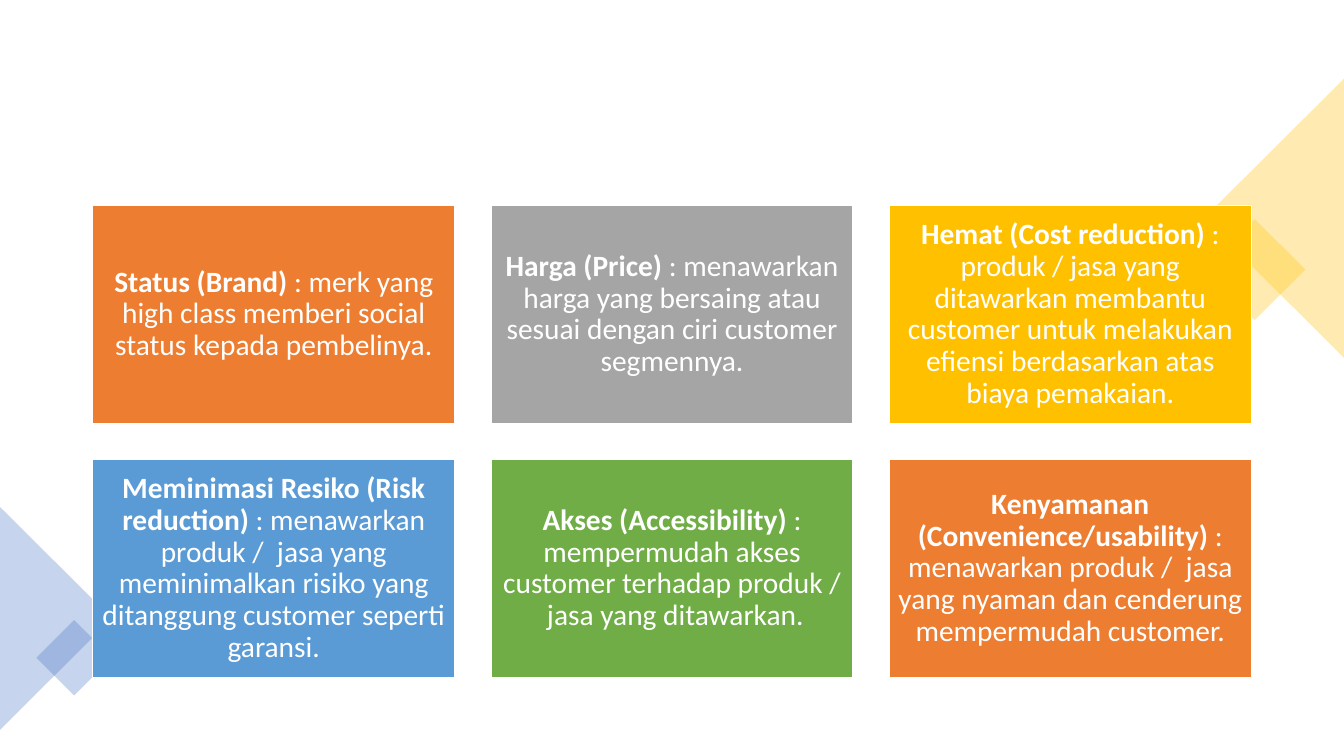
from dataclasses import dataclass

from lxml.etree import SubElement
from pptx import Presentation
from pptx.dml.color import RGBColor
from pptx.enum.shapes import MSO_SHAPE as Preset
from pptx.enum.text import MSO_ANCHOR as Anchor, PP_ALIGN as Align
from pptx.oxml.ns import qn
from pptx.shapes.autoshape import Shape
from pptx.slide import Slide
from pptx.util import Emu, Pt

PX = 9144  # EMU per px, 100 px to the inch
COLORS = {
    "white": "FFFFFF",
    "orange": "ED7D31",
    "gray": "A5A5A5",
    "gold": "FFC000",
    "sky": "5B9BD5",
    "green": "70AD47",
    "blue": "4472C4",
}
COLUMNS = 3
CARD_LEFT, CARD_TOP = 92, 204
CARD_WIDTH, CARD_HEIGHT = 359, 216
GAP = 36
INSET = 9


@dataclass(frozen=True)
class Accent:
    preset: Preset
    left: int
    top: int
    width: int
    height: int
    rotation: int
    color: str


@dataclass(frozen=True)
class Card:
    heading: str
    explanation: str
    color: str


ACCENTS = [
    Accent(Preset.RECTANGLE, 1209, 232, 71, 71, 45, "gold"),
    Accent(Preset.ISOSCELES_TRIANGLE, 1125, 147, 277, 139, 270, "gold"),
    Accent(Preset.ISOSCELES_TRIANGLE, -55, 558, 221, 111, 90, "blue"),
    Accent(Preset.RECTANGLE, 47, 626, 53, 53, 45, "blue"),
]
CARDS = [
    Card("Status (Brand)",
         " : merk yang high class memberi social status kepada pembelinya.", "orange"),
    Card("Harga (Price)",
         " : menawarkan harga yang bersaing atau sesuai dengan ciri customer segmennya.",
         "gray"),
    Card("Hemat (Cost reduction)",
         " : produk / jasa yang ditawarkan membantu customer untuk melakukan efiensi "
         "berdasarkan atas biaya pemakaian.", "gold"),
    Card("Meminimasi Resiko (Risk reduction)",
         " : menawarkan produk /  jasa yang meminimalkan risiko yang ditanggung "
         "customer seperti garansi.", "sky"),
    Card("Akses (Accessibility)",
         " : mempermudah akses customer terhadap produk /  jasa yang ditawarkan.",
         "green"),
    Card("Kenyamanan (Convenience/usability)",
         " : menawarkan produk /  jasa yang nyaman dan cenderung mempermudah customer.",
         "orange"),
]


def px(length: int) -> Emu:
    return Emu(length * PX)


def rgb(color: str) -> RGBColor:
    return RGBColor.from_string(COLORS[color])


def add_filled(slide: Slide, preset: Preset, left: int, top: int,
               width: int, height: int, color: str) -> Shape:
    shape = slide.shapes.add_shape(preset, px(left), px(top), px(width), px(height))
    shape.shadow.inherit = False
    shape.fill.solid()
    shape.fill.fore_color.rgb = rgb(color)
    return shape


def add_accent(slide: Slide, accent: Accent) -> None:
    shape = add_filled(slide, accent.preset, accent.left, accent.top,
                       accent.width, accent.height, accent.color)
    shape.rotation = accent.rotation
    shape.line.fill.background()
    fill_color = shape.fill._xPr.find(qn("a:solidFill")).find(qn("a:srgbClr"))
    SubElement(fill_color, qn("a:alpha")).set("val", "30000")


def write(shape: Shape, text: str, *, bold: bool = False, size: int = 21,
          font: str = "Calibri", color: str = "white") -> None:
    """Append one formatted run to the shape's first paragraph."""
    run = shape.text_frame.paragraphs[0].add_run()
    run.text = text
    run.font.name = font
    run.font.size = Pt(size)
    run.font.bold = bold
    run.font.color.rgb = rgb(color)


def add_card(slide: Slide, card: Card, index: int) -> None:
    row, column = divmod(index, COLUMNS)
    shape = add_filled(slide, Preset.RECTANGLE,
                       CARD_LEFT + column * (CARD_WIDTH + GAP),
                       CARD_TOP + row * (CARD_HEIGHT + GAP),
                       CARD_WIDTH, CARD_HEIGHT, card.color)
    shape.line.color.rgb = rgb("white")
    shape.line.width = Pt(1)

    frame = shape.text_frame
    frame.word_wrap = True
    frame.vertical_anchor = Anchor.MIDDLE
    frame.margin_left = frame.margin_right = px(INSET)
    frame.margin_top = frame.margin_bottom = px(INSET)
    frame.paragraphs[0].alignment = Align.CENTER
    frame.paragraphs[0].line_spacing = 0.9
    write(shape, card.heading, bold=True)
    write(shape, card.explanation)


def main() -> None:
    deck = Presentation()
    deck.slide_width, deck.slide_height = px(1333), px(750)
    slide = deck.slides.add_slide(deck.slide_layouts.get_by_name("Blank"))
    for accent in ACCENTS:
        add_accent(slide, accent)
    for index, card in enumerate(CARDS):
        add_card(slide, card, index)
    deck.save("out.pptx")


if __name__ == "__main__":
    main()
